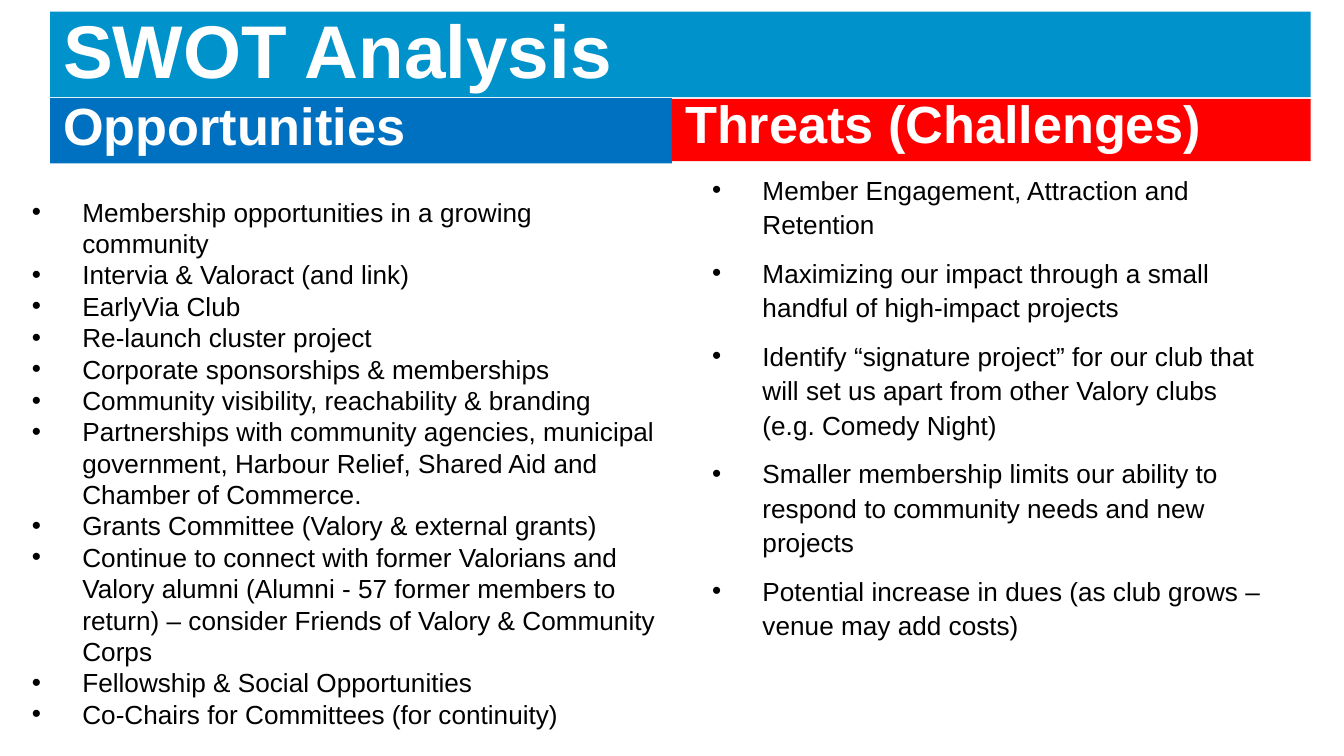
from lxml.etree import SubElement
from pptx import Presentation
from pptx.dml.color import RGBColor
from pptx.enum.shapes import MSO_SHAPE
from pptx.enum.text import MSO_ANCHOR, PP_ALIGN
from pptx.oxml.ns import qn
from pptx.util import Pt


def color(hex_string):
    return RGBColor.from_string(hex_string)


def style(paragraph, size, hex_string, bold):
    paragraph.alignment = PP_ALIGN.LEFT
    for run in paragraph.runs:
        run.font.name = "Arial"
        run.font.size = Pt(size)
        run.font.bold = bold
        run.font.color.rgb = color(hex_string)


deck = Presentation()
deck.slide_width, deck.slide_height = Pt(720), Pt(405)
slide = deck.slides.add_slide(deck.slide_layouts[6])

headings = [
    ("SWOT Analysis", 26.8, 6.3, 675.4, 45.8, "0092CA", 40, MSO_ANCHOR.MIDDLE),
    ("Opportunities", 26.8, 52.6, 333.2, 35, "0070C0", 28, MSO_ANCHOR.BOTTOM),
    ("Threats (Challenges)", 360, 53, 342.2, 33.3, "FF0000", 28, MSO_ANCHOR.BOTTOM),
]
for wording, left, top, width, height, fill, size, anchor in headings:
    heading = slide.shapes.add_shape(
        MSO_SHAPE.RECTANGLE, Pt(left), Pt(top), Pt(width), Pt(height))
    heading.shadow.inherit = False
    heading.fill.solid()
    heading.fill.fore_color.rgb = color(fill)
    heading.line.fill.background()
    heading.text_frame.text = wording
    heading.text_frame.word_wrap = True
    heading.text_frame.vertical_anchor = anchor
    heading.text_frame.paragraphs[0].line_spacing = 0.9
    style(heading.text_frame.paragraphs[0], size, "FFFFFF", True)

threats = [
    "Member Engagement, Attraction and Retention",
    "Maximizing our impact through a small handful of high-impact projects",
    "Identify “signature project” for our club that will set us apart from other Valory clubs (e.g. Comedy Night)",
    "Smaller membership limits our ability to respond to community needs and new projects",
    "Potential increase in dues (as club grows – venue may add costs)",
]
opportunities = [
    "Membership opportunities in a growing community",
    "Intervia & Valoract (and link)",
    "EarlyVia Club",
    "Re-launch cluster project",
    "Corporate sponsorships & memberships",
    "Community visibility, reachability & branding",
    "Partnerships with community agencies, municipal government, Harbour Relief, Shared Aid and Chamber of Commerce.",
    "Grants Committee (Valory & external grants)",
    "Continue to connect with former Valorians and Valory alumni (Alumni - 57 former members to return) – consider Friends of Valory & Community Corps",
    "Fellowship & Social Opportunities",
    "Co-Chairs for Committees (for continuity)",
]
columns = [
    (threats, 374.4, 88, 316.8, 257, 1.1, 7.5),
    (opportunities, 10, 101.5, 350, 296, 1.0, 0),
]
for points, left, top, width, height, spacing, gap in columns:
    column = slide.shapes.add_textbox(Pt(left), Pt(top), Pt(width), Pt(height))
    column.text_frame.word_wrap = True
    column.text_frame.text = "\n".join(points)
    for index, paragraph in enumerate(column.text_frame.paragraphs):
        properties = paragraph._p.get_or_add_pPr()
        properties.set("marL", str(Pt(27)))
        properties.set("indent", str(Pt(-27)))
        SubElement(properties, qn("a:buFont"), typeface="Arial")
        SubElement(properties, qn("a:buChar"), char="•")
        paragraph.line_spacing = spacing
        paragraph.space_before = Pt(gap if index else 0)
        style(paragraph, 14, "000000", False)

deck.save("out.pptx")
